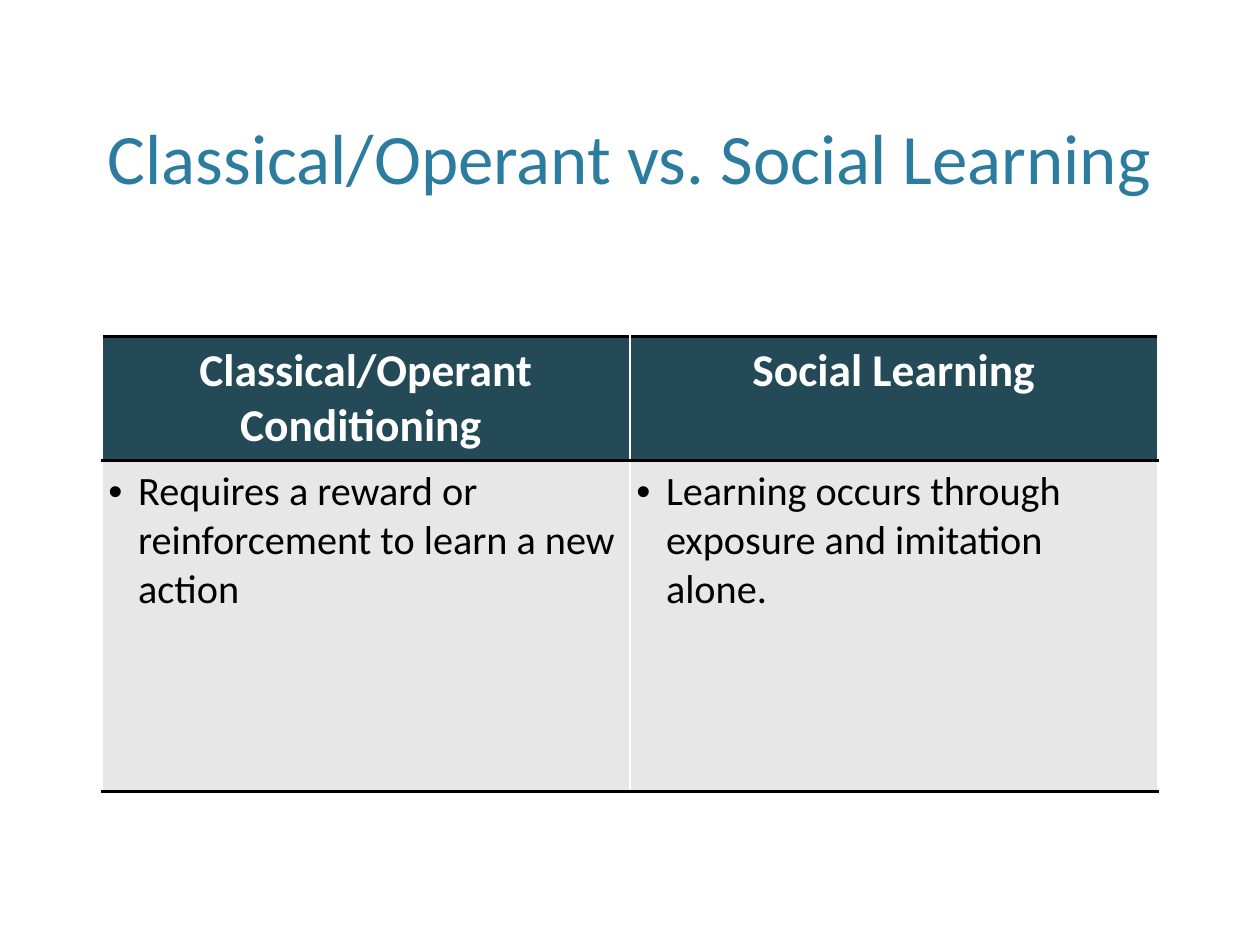
"""Build a slide that compares classical/operant conditioning with social learning."""
from lxml import etree
from pptx import Presentation
from pptx import util as u
from pptx.dml import color
from pptx.enum import text
from pptx.oxml import ns

TITLE = "Classical/Operant vs. Social Learning"
ROWS = [
    ["Classical/Operant Conditioning ", " Social Learning "],
    ["Requires a reward or reinforcement to learn a new action",
     "Learning occurs through exposure and imitation alone."],
]
ROW_STYLES = [
    {"height": 69.8, "fill": "244A58", "color": "FFFFFF", "bullet": False,
     "align": text.PP_ALIGN.CENTER, "font": {"size": u.Pt(26), "bold": True}},
    {"height": 189.4, "fill": "E7E7E7", "color": "000000", "bullet": True,
     "align": text.PP_ALIGN.LEFT, "font": {"size": u.Pt(23), "bold": False}},
]
BORDERS = [("lnL", "FFFFFF", 1), ("lnR", "FFFFFF", 1),
           ("lnT", "000000", 2), ("lnB", "000000", 2)]
TITLE_BOX = (43.2, 8.64, 633.6, 105.12)
TABLE_LEFT, TABLE_TOP, COLUMN_WIDTH = 58.32, 192.24, 301.68
CELL_MARGIN, BULLET_INDENT = 3.6, 17


def apply(target, values):
    for name, value in values.items():
        setattr(target, name, value)


def paint(target, hex_color):
    target.rgb = color.RGBColor.from_string(hex_color)


def write(para, wording, hex_color, values):
    span = para.add_run()
    span.text = wording
    apply(span.font, {"name": "Calibri", **values})
    paint(span.font.color, hex_color)


def add_bullet(para):
    properties = para._p.get_or_add_pPr()
    properties.set("marL", str(u.Pt(BULLET_INDENT)))
    properties.set("indent", str(-u.Pt(BULLET_INDENT)))
    bullet_color = etree.SubElement(properties, ns.qn("a:buClr"))
    etree.SubElement(bullet_color, ns.qn("a:srgbClr"), val="000000")
    etree.SubElement(properties, ns.qn("a:buFont"), typeface="Arial")
    etree.SubElement(properties, ns.qn("a:buChar"), char="•")


def add_borders(cell):
    properties = cell._tc.get_or_add_tcPr()
    for position, (side, hex_color, width) in enumerate(BORDERS):
        line = etree.Element(ns.qn(f"a:{side}"), w=str(u.Pt(width)))
        fill = etree.SubElement(line, ns.qn("a:solidFill"))
        etree.SubElement(fill, ns.qn("a:srgbClr"), val=hex_color)
        properties.insert(position, line)


def add_title(page):
    title = page.shapes.title
    apply(title, dict(zip(("left", "top", "width", "height"), map(u.Pt, TITLE_BOX))))
    apply(title.text_frame, {
        "margin_left": 0, "margin_top": 0, "margin_right": 0, "margin_bottom": 0,
        "word_wrap": True, "auto_size": text.MSO_AUTO_SIZE.NONE,
        "vertical_anchor": text.MSO_ANCHOR.BOTTOM})
    para = title.text_frame.paragraphs[0]
    para.alignment = text.PP_ALIGN.CENTER
    write(para, TITLE, "2C7C9F", {"size": u.Pt(40.5)})


def fill_cell(cell, wording, style):
    margins = ("margin_left", "margin_top", "margin_right", "margin_bottom")
    apply(cell, dict.fromkeys(margins, u.Pt(CELL_MARGIN)))
    cell.fill.solid()
    paint(cell.fill.fore_color, style["fill"])
    add_borders(cell)
    para = cell.text_frame.paragraphs[0]
    para.alignment = style["align"]
    if style["bullet"]:
        add_bullet(para)
    write(para, wording, style["color"], style["font"])


def add_comparison(page):
    columns = len(ROWS[0])
    height = sum(style["height"] for style in ROW_STYLES)
    table = page.shapes.add_table(
        len(ROWS), columns, u.Pt(TABLE_LEFT), u.Pt(TABLE_TOP),
        u.Pt(COLUMN_WIDTH * columns), u.Pt(height)).table
    apply(table, {"first_row": False, "horz_banding": False})
    for row, wordings, style in zip(table.rows, ROWS, ROW_STYLES):
        row.height = u.Pt(style["height"])
        for cell, wording in zip(row.cells, wordings):
            fill_cell(cell, wording, style)


def main():
    deck = Presentation()
    apply(deck, {"slide_width": u.Pt(720), "slide_height": u.Pt(540)})
    page = deck.slides.add_slide(deck.slide_layouts.get_by_name("Title Only"))
    add_title(page)
    add_comparison(page)
    deck.save("out.pptx")


if __name__ == "__main__":
    main()
